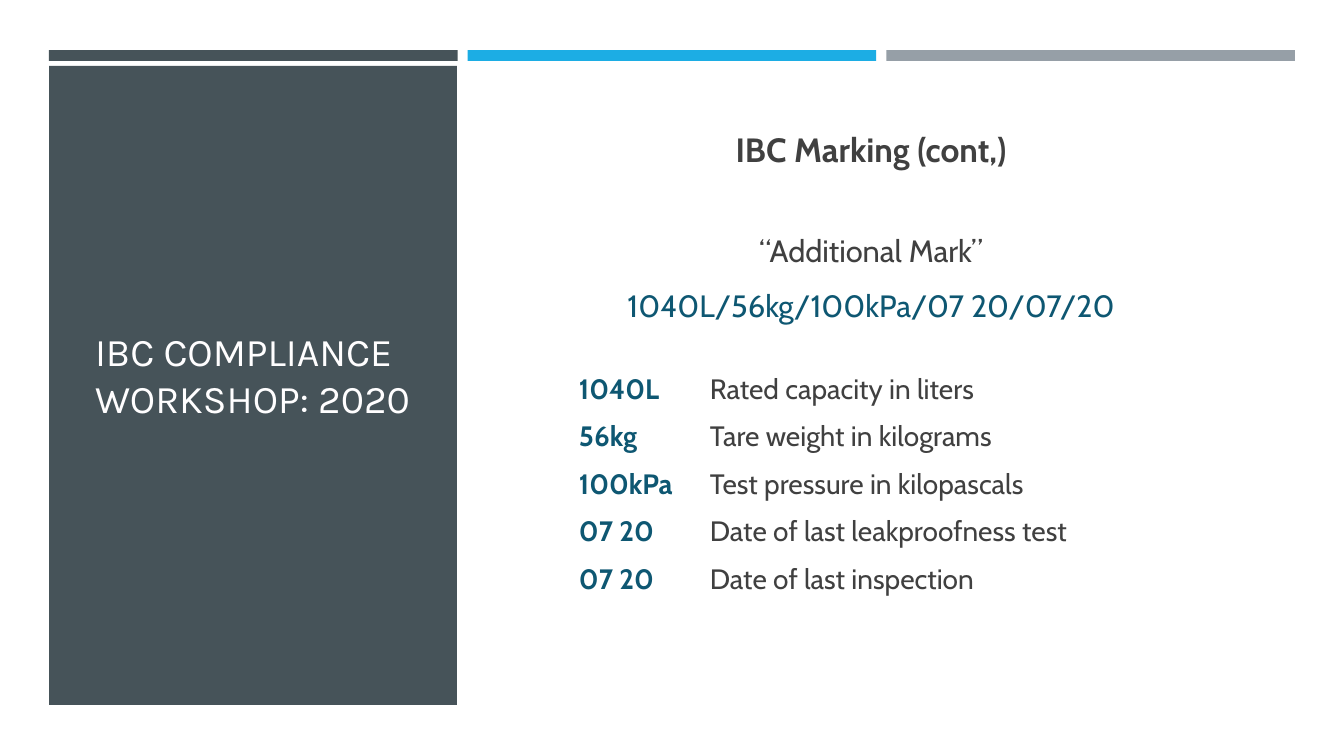
from dataclasses import dataclass

from pptx import Presentation
from pptx import util as u
from pptx.dml.color import RGBColor
from pptx.enum import shapes, text


@dataclass(frozen=True)
class Theme:
    back: str = "FFFFFF"
    slate: str = "465359"
    blue: str = "1CADE4"
    gray: str = "969FA7"
    white: str = "FFFEFF"
    ink: str = "404040"
    teal: str = "0E5772"
    head: str = "Karla"
    body: str = "Cabin"
    title: int = 28
    topic: int = 24
    mark: int = 22
    item: int = 20


theme = Theme()

ITEMS = [
    ("1040L\t", "\tRated capacity in liters"),
    ("56kg\t", "\tTare weight in kilograms"),
    ("100kPa", "\tTest pressure in kilopascals"),
    ("07 20\t", "\tDate of last leakproofness test"),
    ("07 20\t", "\tDate of last inspection"),
]


def px(n):
    return u.Emu(round(n * 914400 / 100.8))


def rgb(code):
    return RGBColor.from_string(code)


def block(slide, box, color):
    shape = slide.shapes.add_shape(shapes.MSO_SHAPE.RECTANGLE, *map(px, box))
    shape.shadow.inherit = False
    shape.fill.solid()
    shape.fill.fore_color.rgb = rgb(color)
    shape.line.fill.background()


def frame(slide, box, anchor, top):
    area = slide.shapes.add_textbox(*map(px, box)).text_frame
    area.word_wrap = True
    area.vertical_anchor = anchor
    area.margin_left = area.margin_right = px(10)
    area.margin_top = px(top)
    return area


def style(par, face, size, color=None, bold=False):
    par.font.name = face
    par.font.size = u.Pt(size)
    par.font.bold = bold
    if color:
        par.font.color.rgb = rgb(color)


def bars(slide, box):
    left, top, wide, high = box
    gap = 10
    span = (wide - 2 * gap) / 3
    for i, color in enumerate((theme.slate, theme.blue, theme.gray)):
        block(slide, (left + i * (span + gap), top, span, high), color)


def panel(slide, box):
    left, top, wide, high = box
    block(slide, box, theme.slate)
    inner = (left + 36, top + 49, wide - 68, high - 120)
    par = frame(slide, inner, text.MSO_ANCHOR.MIDDLE, 5).paragraphs[0]
    par.text = "IBC COMPLIANCE WORKSHOP: 2020"
    style(par, theme.head, theme.title, theme.white)


def hang(par, left, shift):
    props = par._p.get_or_add_pPr()
    props.set("marL", str(px(left)))
    props.set("indent", str(px(shift)))


def content(slide, box):
    area = frame(slide, box, text.MSO_ANCHOR.TOP, 10)
    lines = [
        ("IBC Marking (cont,)", theme.topic, theme.ink, True, 0),
        ("“Additional Mark”", theme.mark, theme.ink, False, 36),
        ("1040L/56kg/100kPa/07 20/07/20", theme.mark, theme.teal, False, 4),
    ]
    for i, (words, size, color, bold, before) in enumerate(lines):
        par = area.add_paragraph() if i else area.paragraphs[0]
        par.text = words
        style(par, theme.body, size, color, bold)
        par.alignment = text.PP_ALIGN.CENTER
        par.line_spacing = 1.1
        par.space_before = u.Pt(before)
        par.space_after = u.Pt(6)
    for i, (code, label) in enumerate(ITEMS):
        par = area.add_paragraph()
        style(par, theme.body, theme.item)
        par.space_before = u.Pt(4 if i else 28)
        par.space_after = u.Pt(6)
        hang(par, 99, -30)
        for words, color, bold in ((code, theme.teal, True), (label, theme.ink, False)):
            run = par.add_run()
            run.text = words
            run.font.bold = bold
            run.font.color.rgb = rgb(color)


def main():
    deck = Presentation()
    deck.slide_width, deck.slide_height = px(1344), px(756)
    slide = deck.slides.add_slide(deck.slide_layouts[6])
    block(slide, (0, 0, 1344, 756), theme.back)
    bars(slide, (49, 50, 1246, 11))
    panel(slide, (49, 66, 408, 639))
    content(slide, (500, 115, 742, 531))
    deck.save("out.pptx")


if __name__ == "__main__":
    main()
